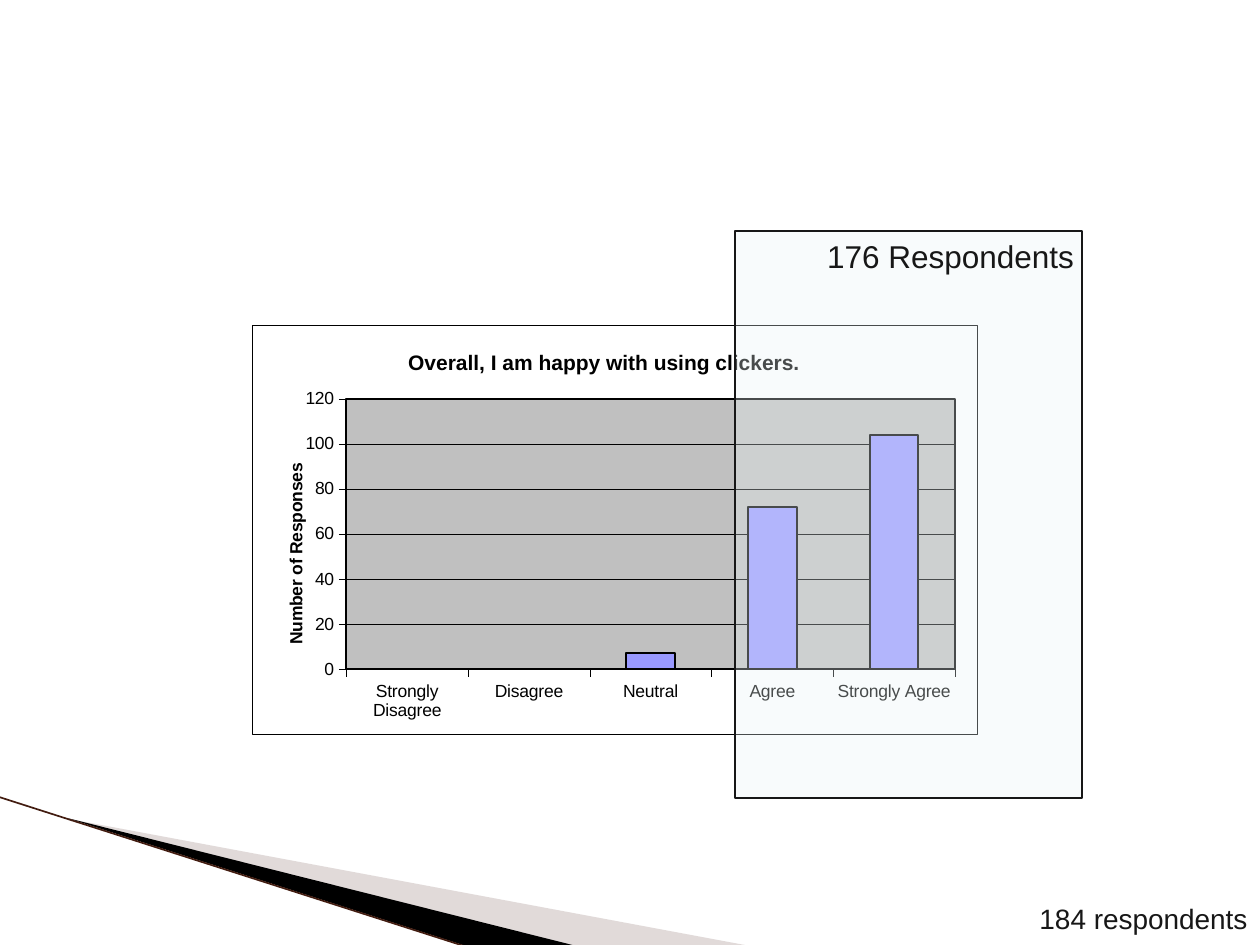
from lxml import etree
from pptx import Presentation
from pptx.chart.data import CategoryChartData
from pptx.dml.color import RGBColor
from pptx.enum.chart import XL_CHART_TYPE as CT, XL_TICK_MARK as TICK
from pptx.enum.shapes import MSO_CONNECTOR as CONN, MSO_SHAPE as SHAPE
from pptx.enum.text import PP_ALIGN as ALIGN
from pptx.oxml import parse_xml
from pptx.oxml.ns import nsdecls, qn
from pptx.util import Pt

PX = 914400 // 126
COLORS = {"black": "000000", "white": "FFFFFF", "text": "171717", "veil": "EAF5F6",
          "wedge": "B5A3A1", "edge": "421C10", "plot": "C0C0C0", "bar": "9999FF"}

# Content
TITLE = "Overall, I am happy with using clickers."
AXIS_TITLE = "Number of Responses"
RESPONSES = {"Strongly Disagree": 0, "Disagree": 0, "Neutral": 7,
             "Agree": 72, "Strongly Agree": 104}
CHART_BOX = (252, 325, 725, 410)
PLOT_LAYOUT = {"x": 0.13, "y": 0.18, "w": 0.84, "h": 0.66}
TITLE_LAYOUT = {"x": 0.21, "y": 0.05}
AXIS_TITLE_LAYOUT = {"x": 0.04, "y": 0.33}
WEDGES = [  # points, colour, opacity in percent
    ([(69, 819), (750, 946), (575, 946)], "wedge", 40),
    ([(67, 818), (576, 946), (469, 947)], "black", 100),
]
EDGE = (-1, 797, 467, 947)
VEIL_BOX = (735, 231, 347, 567)
LABELS = [  # text, box, size, alignment
    ("184 respondents", (955, 895, 305, 47), 16, ALIGN.RIGHT),
    ("176 Respondents", (809, 231, 283, 50), 18, ALIGN.CENTER),
]


def emu(values):
    return [v * PX for v in values]


def rgb(name):
    return RGBColor.from_string(COLORS[name])


def set_fill(sp, color, opacity=100):
    sp.fill.solid()
    sp.fill.fore_color.rgb = rgb(color)
    if opacity < 100:
        node = sp.fill._xPr.find(qn("a:solidFill"))[0]
        etree.SubElement(node, qn("a:alpha")).set("val", str(opacity * 1000))


def set_line(line, color, width):
    line.color.rgb = rgb(color)
    line.width = Pt(width)


def set_font(font, **extra):
    values = {"name": "Arial", "size": Pt(10), "bold": False, **extra}
    for key, value in values.items():
        setattr(font, key, value)
    font.color.rgb = rgb("black")


def layout_xml(spots, inner=False):
    target = '<c:layoutTarget val="inner"/>' if inner else ""
    modes = "".join(f'<c:{k}Mode val="edge"/>' for k in "xy")
    sizes = "".join(f'<c:{k} val="{v}"/>' for k, v in spots.items())
    return parse_xml(f'<c:layout {nsdecls("c")}><c:manualLayout>{target}{modes}{sizes}'
                     '</c:manualLayout></c:layout>')


def area_xml(fill, width):
    return parse_xml(
        f'<c:spPr {nsdecls("c", "a")}><a:solidFill><a:srgbClr val="{COLORS[fill]}"/></a:solidFill>'
        f'<a:ln w="{Pt(width)}"><a:solidFill><a:srgbClr val="{COLORS["black"]}"/></a:solidFill>'
        '</a:ln></c:spPr>')


def drop_layout(parent):
    for node in parent.findall(qn("c:layout")):
        parent.remove(node)


def set_title(title, text, size, spots):
    tf = title.text_frame
    tf.text = text
    set_font(tf.paragraphs[0].runs[0].font, size=Pt(size), bold=True)
    node = title._element
    drop_layout(node)
    node.find(qn("c:tx")).addnext(layout_xml(spots))


def add_response_chart(s):
    data = CategoryChartData()
    data.categories = list(RESPONSES)
    data.add_series("Series 1", list(RESPONSES.values()))
    chart = s.shapes.add_chart(CT.COLUMN_CLUSTERED, *emu(CHART_BOX), data).chart
    chart.has_legend = False
    set_font(chart.font)
    chart.has_title = True
    set_title(chart.chart_title, TITLE, 12, TITLE_LAYOUT)

    # Axes
    cat_axis, val_axis = chart.category_axis, chart.value_axis
    for axis in (cat_axis, val_axis):
        axis.major_tick_mark, axis.minor_tick_mark = TICK.OUTSIDE, TICK.NONE
        set_line(axis.format.line, "black", 0.25)
        set_font(axis.tick_labels.font)
    val_axis.minimum_scale, val_axis.maximum_scale, val_axis.major_unit = 0, 120, 20
    val_axis.has_major_gridlines = True
    set_line(val_axis.major_gridlines.format.line, "black", 0.25)
    val_axis.has_title = True
    set_title(val_axis.axis_title, AXIS_TITLE, 10, AXIS_TITLE_LAYOUT)

    # Bars
    plot = chart.plots[0]
    plot.gap_width, plot.vary_by_categories = 150, False
    bars = plot.series[0].format
    set_fill(bars, "bar")
    set_line(bars.line, "black", 1)

    # Chart and plot areas
    root = chart._chartSpace.find(qn("c:chart"))
    root.addnext(area_xml("white", 0.25))
    area = root.find(qn("c:plotArea"))
    drop_layout(area)
    area.insert(0, layout_xml(PLOT_LAYOUT, inner=True))
    area.append(area_xml("plot", 1))


prs = Presentation()
prs.slide_width, prs.slide_height = emu((1260, 945))
s = prs.slides.add_slide(prs.slide_layouts[6])

# Corner decoration
for points, color, opacity in WEDGES:
    fb = s.shapes.build_freeform(*points[0], scale=PX)
    fb.add_line_segments(points[1:], close=True)
    sp = fb.convert_to_shape()
    sp.shadow.inherit = False
    set_fill(sp, color, opacity)
    sp.line.fill.background()
edge = s.shapes.add_connector(CONN.STRAIGHT, *emu(EDGE))
set_line(edge.line, "edge", 0.95)
etree.SubElement(edge._element.spPr, qn("a:effectLst"))

add_response_chart(s)

# Veil over the agreeing answers
veil = s.shapes.add_shape(SHAPE.RECTANGLE, *emu(VEIL_BOX))
veil.shadow.inherit = False
set_fill(veil, "veil", 31)
set_line(veil.line, "text", 0.75)

# Respondent counts
for text, box, size, align in LABELS:
    tf = s.shapes.add_textbox(*emu(box)).text_frame
    tf.word_wrap = True
    p = tf.paragraphs[0]
    p.alignment = align
    r = p.add_run()
    r.text = text
    set_font(r.font, size=Pt(size))
    r.font.color.rgb = rgb("text")

prs.save("out.pptx")
